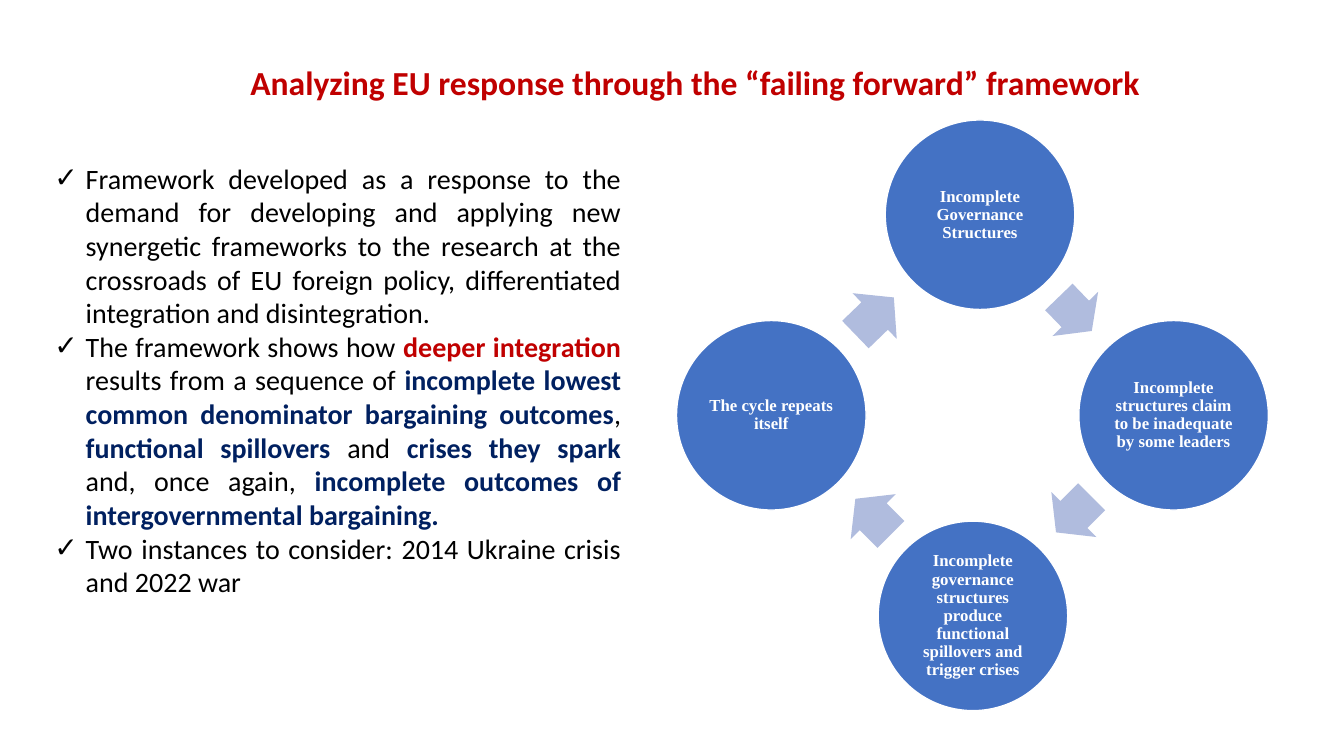
"""Build the slide on the "failing forward" framework and its cycle."""
from dataclasses import dataclass
from typing import NamedTuple

from lxml.etree import SubElement
from pptx import Presentation
from pptx.dml.color import RGBColor
from pptx.enum.shapes import MSO_SHAPE as Preset
from pptx.enum.text import MSO_ANCHOR as Anchor, MSO_AUTO_SIZE as AutoSize, PP_ALIGN as Align
from pptx.oxml.ns import qn
from pptx.util import Inches, Pt


@dataclass(frozen=True)
class Theme:
    red: str = "C00000"
    navy: str = "002060"
    black: str = "000000"
    white: str = "FFFFFF"
    circle: str = "4472C4"
    arrow: str = "B0BCDE"
    text_font: str = "Calibri"
    cycle_font: str = "Times New Roman"
    title_size: int = 24
    body_size: int = 20
    cycle_size: int = 12


class Stage(NamedTuple):
    left: float
    top: float
    text: str


class Arrow(NamedTuple):
    left: float
    top: float
    width: float
    rotation: int


THEME = Theme()
DIAMETER = 1.88
ARROW_HEIGHT = 0.63
HANGING = 0.31

TITLE = "Analyzing EU response through the “failing forward” framework"
POINTS = [
    [("Framework developed as a response to the demand for developing and applying new "
      "synergetic frameworks to the research at the crossroads of EU foreign policy, "
      "differentiated integration and disintegration.", THEME.black)],
    [("The framework shows how ", THEME.black),
     ("deeper integration ", THEME.red),
     ("results from a sequence of ", THEME.black),
     ("incomplete lowest common denominator bargaining outcomes", THEME.navy),
     (", ", THEME.black),
     ("functional spillovers ", THEME.navy),
     ("and ", THEME.black),
     ("crises they spark ", THEME.navy),
     ("and, once again, ", THEME.black),
     ("incomplete outcomes of intergovernmental bargaining.", THEME.navy)],
    [("Two instances to consider: 2014 Ukraine crisis and 2022 war", THEME.black)],
]
STAGES = [
    Stage(8.78, 1.19, "Incomplete Governance Structures"),
    Stage(10.7, 3.18, "Incomplete structures claim to be inadequate by some leaders"),
    Stage(8.71, 5.17, "Incomplete governance structures produce functional spillovers "
                      "and trigger crises"),
    Stage(6.71, 3.18, "The cycle repeats itself"),
]
ARROWS = [
    Arrow(10.43, 2.8, 0.47, 46),
    Arrow(10.4, 4.79, 0.5, 135),
    Arrow(8.41, 4.81, 0.5, 225),
    Arrow(8.41, 2.82, 0.53, 316),
]


def add_span(para, text: str, *, size: int, color: str, bold: bool = True,
             font: str = THEME.text_font) -> None:
    span = para.add_run()
    span.text = text
    span.font.name = font
    span.font.size = Pt(size)
    span.font.bold = bold
    span.font.color.rgb = RGBColor.from_string(color)


def format_para(para, align: Align, line_spacing: float) -> None:
    para.alignment = align
    para.line_spacing = line_spacing
    para.space_before = para.space_after = Pt(0)


def add_check(para) -> None:
    properties = para._p.get_or_add_pPr()
    properties.set("marL", str(Inches(HANGING)))
    properties.set("indent", str(-Inches(HANGING)))
    SubElement(properties, qn("a:buFont"), typeface=THEME.text_font)
    SubElement(properties, qn("a:buChar"), char="✓")


def place(box, left: float, top: float, width: float, height: float):
    box.left, box.top = Inches(left), Inches(top)
    box.width, box.height = Inches(width), Inches(height)
    frame = box.text_frame
    frame.word_wrap = True
    frame.auto_size = AutoSize.NONE
    frame.vertical_anchor = Anchor.TOP
    return frame


def fill_title(box) -> None:
    para = place(box, 1.21, 0.61, 11.37, 0.58).paragraphs[0]
    format_para(para, Align.CENTER, 0.9)
    add_span(para, TITLE, size=THEME.title_size, color=THEME.red)


def fill_points(box) -> None:
    frame = place(box, 0.44, 1.55, 5.82, 5.08)
    for index, point in enumerate(POINTS):
        para = frame.add_paragraph() if index else frame.paragraphs[0]
        format_para(para, Align.JUSTIFY, 1.0)
        add_check(para)
        for text, color in point:
            add_span(para, text, size=THEME.body_size, color=color,
                     bold=color != THEME.black)


def add_filled(slide, preset: Preset, left: float, top: float, width: float,
               height: float, color: str):
    shape = slide.shapes.add_shape(preset, Inches(left), Inches(top),
                                   Inches(width), Inches(height))
    shape.shadow.inherit = False
    shape.fill.solid()
    shape.fill.fore_color.rgb = RGBColor.from_string(color)
    return shape


def draw_stage(slide, stage: Stage) -> None:
    circle = add_filled(slide, Preset.OVAL, stage.left, stage.top,
                        DIAMETER, DIAMETER, THEME.circle)
    circle.line.color.rgb = RGBColor.from_string(THEME.white)
    circle.line.width = Pt(1)
    frame = circle.text_frame
    frame.word_wrap = True
    frame.vertical_anchor = Anchor.MIDDLE
    frame.margin_left = frame.margin_right = Inches(0.02)
    frame.margin_top = frame.margin_bottom = Inches(0.02)
    para = frame.paragraphs[0]
    format_para(para, Align.CENTER, 0.9)
    add_span(para, stage.text, size=THEME.cycle_size, color=THEME.white,
             font=THEME.cycle_font)


def draw_arrow(slide, arrow: Arrow) -> None:
    shape = add_filled(slide, Preset.RIGHT_ARROW, arrow.left, arrow.top,
                       arrow.width, ARROW_HEIGHT, THEME.arrow)
    shape.line.fill.background()
    shape.adjustments[0] = 0.6
    shape.adjustments[1] = 0.5
    shape.rotation = arrow.rotation


def main() -> None:
    deck = Presentation()
    deck.slide_width, deck.slide_height = Inches(13.33), Inches(7.5)
    page = deck.slides.add_slide(deck.slide_layouts[1])
    fill_title(page.shapes.title)
    fill_points(page.placeholders[1])
    for stage, arrow in zip(STAGES, ARROWS):
        draw_stage(page, stage)
        draw_arrow(page, arrow)
    deck.save("out.pptx")


if __name__ == "__main__":
    main()
